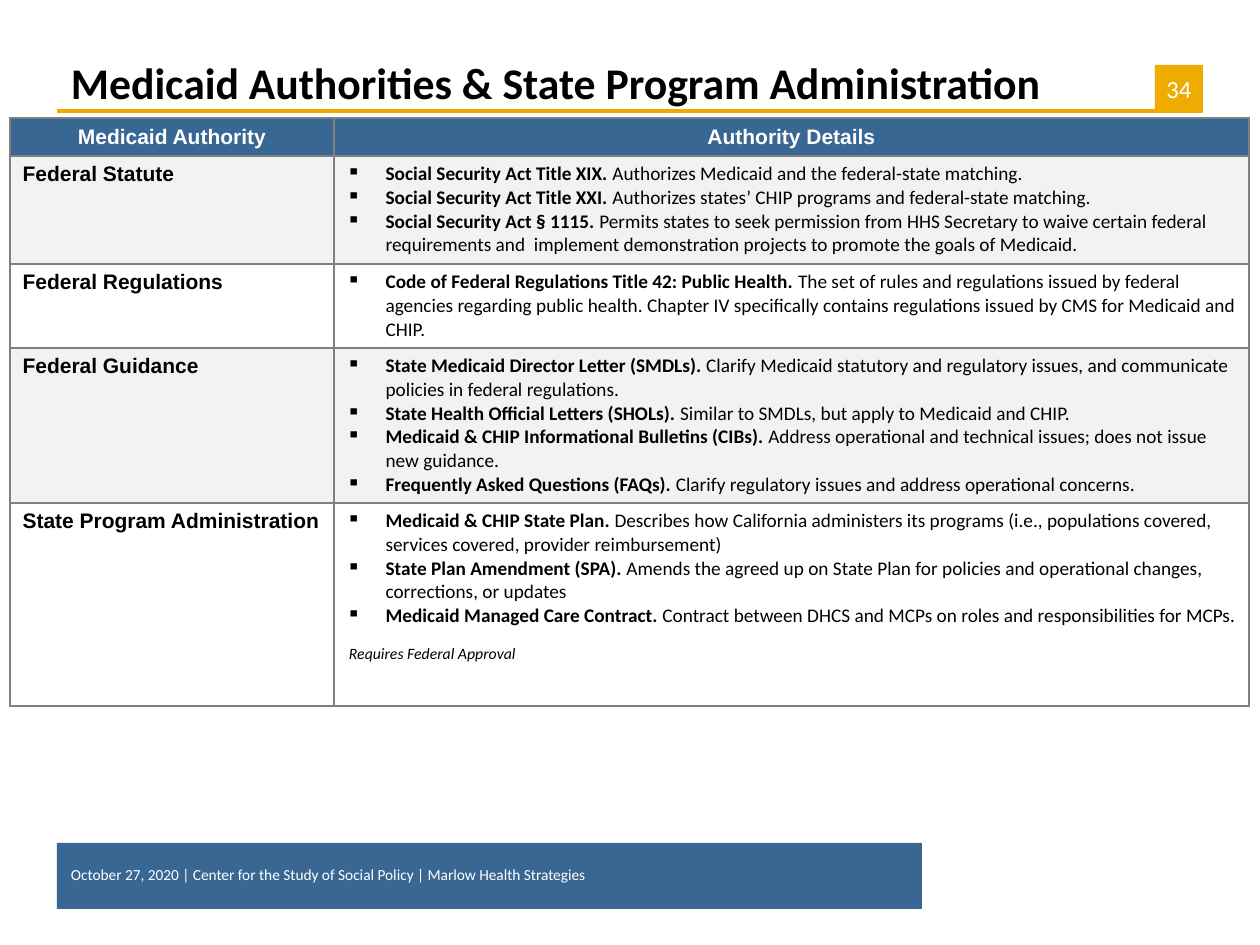
from dataclasses import dataclass

from lxml.etree import SubElement
from pptx import Presentation
from pptx.dml.color import RGBColor
from pptx.enum.shapes import MSO_CONNECTOR, MSO_SHAPE
from pptx.enum.text import MSO_ANCHOR, PP_ALIGN
from pptx.oxml.ns import qn
from pptx.util import Pt

PX = 914400 / 126
BLUE, GOLD, GRAY = "386794", "F0AB00", "808080"
WHITE, BLACK, PALE = "FFFFFF", "000000", "F2F2F2"


@dataclass
class Box:
    left: int
    top: int
    width: int
    height: int

    def emu(self) -> tuple:
        return tuple(px(n) for n in (self.left, self.top, self.width, self.height))


@dataclass
class Style:
    size: float
    color: str = BLACK
    font: str = "Calibri"
    bold: bool = False
    italic: bool = False


@dataclass
class Authority:
    name: str
    height: int
    details: list[tuple[str, str]]


HEADER = Style(12, WHITE, "Arial", bold=True)
ROW_NAME = Style(12, font="Arial", bold=True)
LEAD, DETAIL = Style(11, bold=True), Style(11)

AUTHORITIES = [
    Authority("Federal Statute", 108, [
        ("Social Security Act Title XIX. ",
         "Authorizes Medicaid and the federal-state matching."),
        ("Social Security Act Title XXI. ",
         "Authorizes states’ CHIP programs and federal-state matching."),
        ("Social Security Act § 1115. ",
         "Permits states to seek permission from HHS Secretary to waive certain federal "
         "requirements and  implement demonstration projects to promote the goals of Medicaid."),
    ]),
    Authority("Federal Regulations", 84, [
        ("Code of Federal Regulations Title 42: Public Health. ",
         "The set of rules and regulations issued by federal agencies regarding public health. "
         "Chapter IV specifically contains regulations issued by CMS for Medicaid and CHIP."),
    ]),
    Authority("Federal Guidance", 155, [
        ("State Medicaid Director Letter (SMDLs). ",
         "Clarify Medicaid statutory and regulatory issues, and communicate policies in "
         "federal regulations."),
        ("State Health Official Letters (SHOLs). ",
         "Similar to SMDLs, but apply to Medicaid and CHIP."),
        ("Medicaid & CHIP Informational Bulletins (CIBs). ",
         "Address operational and technical issues; does not issue new guidance."),
        ("Frequently Asked Questions (FAQs). ",
         "Clarify regulatory issues and address operational concerns."),
    ]),
    Authority("State Program Administration", 203, [
        ("Medicaid & CHIP State Plan. ",
         "Describes how California administers its programs (i.e., populations covered, "
         "services covered, provider reimbursement)"),
        ("State Plan Amendment (SPA). ",
         "Amends the agreed up on State Plan for policies and operational changes, "
         "corrections, or updates"),
        ("Medicaid Managed Care Contract. ",
         "Contract between DHCS and MCPs on roles and responsibilities for MCPs."),
    ]),
]


def px(count: int) -> int:
    return round(count * PX)


def rgb(color: str) -> RGBColor:
    return RGBColor.from_string(color)


def apply_style(font, style: Style) -> None:
    font.size, font.name = Pt(style.size), style.font
    font.bold, font.italic = style.bold, style.italic
    font.color.rgb = rgb(style.color)


def set_text(frame, text: str, style: Style, align=PP_ALIGN.LEFT) -> None:
    frame.text = text
    paragraph = frame.paragraphs[0]
    paragraph.alignment = align
    apply_style(paragraph.runs[0].font, style)


def set_insets(frame, horizontal: int, vertical: int) -> None:
    frame.margin_left = frame.margin_right = px(horizontal)
    frame.margin_top = frame.margin_bottom = px(vertical)


def add_rectangle(slide, box: Box, color: str):
    shape = slide.shapes.add_shape(MSO_SHAPE.RECTANGLE, *box.emu())
    shape.shadow.inherit = False
    shape.fill.solid()
    shape.fill.fore_color.rgb = rgb(color)
    shape.line.fill.background()
    return shape


def add_text(slide, box: Box, text: str, style: Style, anchor=MSO_ANCHOR.TOP,
             insets: tuple[int, int] = (13, 6)):
    frame = slide.shapes.add_textbox(*box.emu()).text_frame
    frame.word_wrap = True
    frame.vertical_anchor = anchor
    set_insets(frame, *insets)
    set_text(frame, text, style)
    return frame


def add_rule(slide, left: int, right: int, y: int) -> None:
    rule = slide.shapes.add_connector(
        MSO_CONNECTOR.STRAIGHT, px(left), px(y), px(right), px(y))
    rule.line.color.rgb = rgb(GOLD)
    rule.line.width = Pt(2)
    SubElement(rule.element.spPr, qn("a:effectLst"))


def format_cell(cell, fill: str) -> None:
    """Border first, then fill, as the schema orders them."""
    properties = cell._tc.get_or_add_tcPr()
    for side in ("lnL", "lnR", "lnT", "lnB"):
        border = SubElement(properties, qn(f"a:{side}"), w=str(Pt(1)))
        SubElement(SubElement(border, qn("a:solidFill")), qn("a:srgbClr"), val=GRAY)
    cell.fill.solid()
    cell.fill.fore_color.rgb = rgb(fill)


def add_details(frame, details: list[tuple[str, str]]) -> None:
    for index, parts in enumerate(details):
        paragraph = frame.add_paragraph() if index else frame.paragraphs[0]
        properties = paragraph._p.get_or_add_pPr()
        properties.set("marL", str(px(39)))
        properties.set("indent", str(-px(39)))
        SubElement(properties, qn("a:buChar"), char="▪")
        for text, style in zip(parts, (LEAD, DETAIL)):
            run = paragraph.add_run()
            run.text = text
            apply_style(run.font, style)


def add_authority_table(slide) -> None:
    heights = [36] + [authority.height for authority in AUTHORITIES]
    widths = [324, 915]
    box = Box(10, 118, sum(widths), sum(heights))
    table = slide.shapes.add_table(len(heights), len(widths), *box.emu()).table
    for column, width in zip(table.columns, widths):
        column.width = px(width)
    for row, height in zip(table.rows, heights):
        row.height = px(height)
    for cell, text in zip(table.rows[0].cells, ("Medicaid Authority", "Authority Details")):
        format_cell(cell, BLUE)
        cell.vertical_anchor = MSO_ANCHOR.MIDDLE
        set_text(cell.text_frame, text, HEADER, PP_ALIGN.CENTER)
    for index, authority in enumerate(AUTHORITIES, start=1):
        name_cell, detail_cell = table.rows[index].cells
        for cell in (name_cell, detail_cell):
            format_cell(cell, PALE if index % 2 else WHITE)
        set_text(name_cell.text_frame, authority.name, ROW_NAME)
        add_details(detail_cell.text_frame, authority.details)


def main() -> None:
    presentation = Presentation()
    presentation.slide_width, presentation.slide_height = px(1260), px(945)
    slide = presentation.slides.add_slide(presentation.slide_layouts[6])

    add_rectangle(slide, Box(57, 843, 1002, 66), BLUE)
    add_rule(slide, 57, 1203, 111)
    page_number = add_rectangle(slide, Box(1155, 65, 48, 47), GOLD).text_frame
    page_number.word_wrap = False
    page_number.vertical_anchor = MSO_ANCHOR.MIDDLE
    set_insets(page_number, 0, 0)
    set_text(page_number, "34", Style(14.1, WHITE), PP_ALIGN.CENTER)

    add_text(slide, Box(57, 48, 1097, 67), "Medicaid Authorities & State Program Administration",
             Style(25, bold=True), MSO_ANCHOR.BOTTOM, (14, 7))
    footer = add_text(
        slide, Box(57, 862, 811, 28),
        "October 27, 2020 | Center for the Study of Social Policy | Marlow Health Strategies",
        Style(8.8, WHITE), MSO_ANCHOR.MIDDLE, (14, 0))
    footer.paragraphs[0].line_spacing = 0.8
    footer_gap = add_rectangle(slide, Box(923, 843, 144, 66), WHITE)
    footer_gap.line.color.rgb = rgb(WHITE)
    footer_gap.line.width = Pt(0.75)

    add_authority_table(slide)
    add_text(slide, Box(336, 638, 347, 31), "Requires Federal Approval", Style(9, italic=True))
    presentation.save("out.pptx")


if __name__ == "__main__":
    main()
